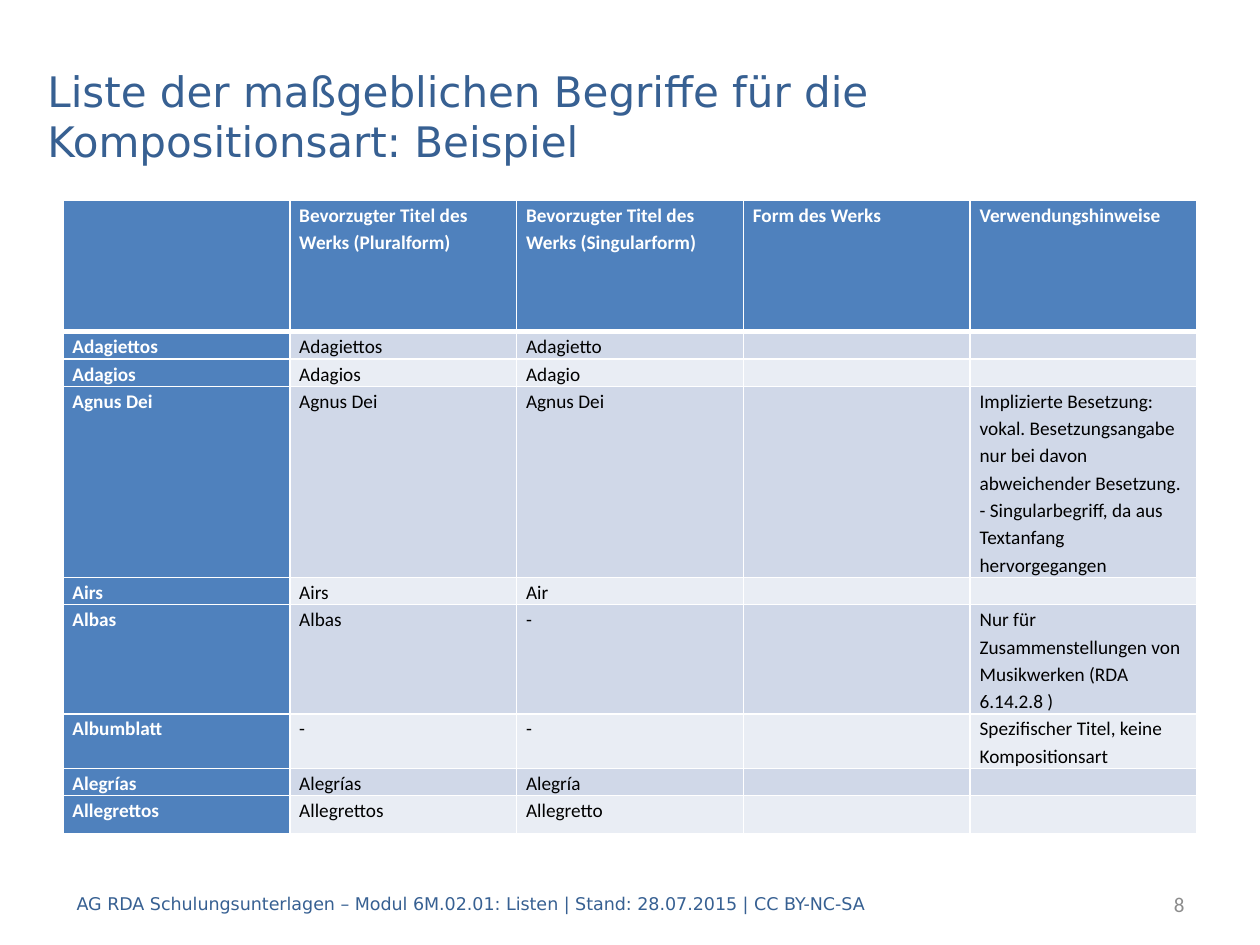
import pptx
import pptx.dml.color
import pptx.enum.text
import pptx.oxml.ns
import pptx.util
from lxml import etree

Pt = pptx.util.Pt
PP_ALIGN = pptx.enum.text.PP_ALIGN
MIDDLE = pptx.enum.text.MSO_ANCHOR.MIDDLE

COLORS = {
    "heading": "376092",
    "page_number": "8C8C8C",
    "header": "4F81BD",
    "band_dark": "D0D8E8",
    "band_light": "E9EDF4",
    "white": "FFFFFF",
    "black": "000000",
}
HEADING_FONT = "DejaVu Sans"
BODY_FONT = "Calibri"
TABLE_FONT_SIZE = 11

COLUMN_WIDTH = 129.6
HEADER_HEIGHT, LINE_HEIGHT, LAST_ROW_HEIGHT = 75, 15.6, 21.6
HEADER = ("", "Bevorzugter Titel des Werks (Pluralform)",
          "Bevorzugter Titel des Werks (Singularform)", "Form des Werks", "Verwendungshinweise")
# Each term comes with the number of text lines its row has to hold.
TERMS = [
    (1, ("Adagiettos", "Adagiettos", "Adagietto", "", "")),
    (1, ("Adagios", "Adagios", "Adagio", "", "")),
    (7, ("Agnus Dei", "Agnus Dei", "Agnus Dei", "",
         "Implizierte Besetzung: vokal. Besetzungsangabe nur bei davon abweichender Besetzung. "
         "- Singularbegriff, da aus Textanfang hervorgegangen")),
    (1, ("Airs", "Airs", "Air", "", "")),
    (4, ("Albas", "Albas", "-", "",
         "Nur für Zusammenstellungen von Musikwerken (RDA 6.14.2.8 )")),
    (2, ("Albumblatt", "-", "-", "", "Spezifischer Titel, keine Kompositionsart")),
    (1, ("Alegrías", "Alegrías", "Alegría", "", "")),
    (1, ("Allegrettos", "Allegrettos", "Allegretto", "", "")),
]


def rgb(color):
    return pptx.dml.color.RGBColor.from_string(COLORS[color])


def write_text(text_frame, text, *, size, color, font=BODY_FONT, bold=False,
               align=PP_ALIGN.LEFT, line_spacing=None):
    paragraph = text_frame.paragraphs[0]
    paragraph.alignment = align
    paragraph.line_spacing = line_spacing
    run = paragraph.add_run()
    run.text = text
    run.font.name = font
    run.font.size = Pt(size)
    run.font.bold = bold
    run.font.color.rgb = rgb(color)


def add_text_box(slide, text, left, top, width, height, **text_format):
    shape = slide.shapes.add_textbox(Pt(left), Pt(top), Pt(width), Pt(height))
    shape.text_frame.word_wrap = True
    shape.text_frame.vertical_anchor = MIDDLE
    write_text(shape.text_frame, text, **text_format)


def set_borders(cell, **widths):
    """Draw white cell borders; widths are points keyed by L, R, T and B."""
    properties = cell._tc.get_or_add_tcPr()
    for side, width in widths.items():
        line = etree.SubElement(properties, pptx.oxml.ns.qn(f"a:ln{side}"), w=str(Pt(width)))
        fill = etree.SubElement(line, pptx.oxml.ns.qn("a:solidFill"))
        etree.SubElement(fill, pptx.oxml.ns.qn("a:srgbClr"), val=COLORS["white"])


def set_empty_size(cell):
    """Keep an empty cell from stretching its row with the default text size."""
    paragraph = cell.text_frame.paragraphs[0]._p
    etree.SubElement(paragraph, pptx.oxml.ns.qn("a:endParaRPr"), sz=str(TABLE_FONT_SIZE * 100))


def fill_cell(cell, text, row, column):
    is_heading = row == 0 or column == 0
    band = "band_dark" if row % 2 else "band_light"
    cell.margin_left = cell.margin_right = Pt(5.4)
    cell.margin_top = cell.margin_bottom = Pt(0)
    set_borders(cell, L=1, R=1, T=3 if row == 1 else 1, B=3 if row == 0 else 1)
    cell.fill.solid()
    cell.fill.fore_color.rgb = rgb("header" if is_heading else band)
    if text:
        write_text(cell.text_frame, text, size=TABLE_FONT_SIZE, bold=is_heading,
                   color="white" if is_heading else "black", line_spacing=1.15)
    else:
        set_empty_size(cell)


def add_terms_table(slide):
    rows = [HEADER] + [texts for _, texts in TERMS]
    term_heights = [LINE_HEIGHT * lines for lines, _ in TERMS[:-1]]
    heights = [HEADER_HEIGHT, *term_heights, LAST_ROW_HEIGHT]
    table = slide.shapes.add_table(
        len(rows), len(HEADER), Pt(36), Pt(114.6),
        Pt(COLUMN_WIDTH * len(HEADER)), Pt(sum(heights))).table
    table.first_col = True
    for column in table.columns:
        column.width = Pt(COLUMN_WIDTH)
    for row, (texts, height) in enumerate(zip(rows, heights)):
        table.rows[row].height = Pt(height)
        for column, text in enumerate(texts):
            fill_cell(table.cell(row, column), text, row, column)


def main():
    presentation = pptx.Presentation()
    presentation.slide_width, presentation.slide_height = Pt(720), Pt(540)
    slide = presentation.slides.add_slide(presentation.slide_layouts[6])
    add_text_box(slide, "Liste der maßgeblichen Begriffe für die Kompositionsart: Beispiel",
                 20, 32, 680, 68, size=24, color="heading", font=HEADING_FONT)
    add_text_box(slide, "8", 569.5, 502, 114.5, 29,
                 size=12, color="page_number", align=PP_ALIGN.RIGHT)
    add_terms_table(slide)
    add_text_box(slide, "AG RDA Schulungsunterlagen – Modul 6M.02.01: Listen | "
                 "Stand: 28.07.2015 | CC BY-NC-SA",
                 36.7, 502, 584, 29, size=10, color="heading", font=HEADING_FONT)
    presentation.save("out.pptx")


if __name__ == "__main__":
    main()
